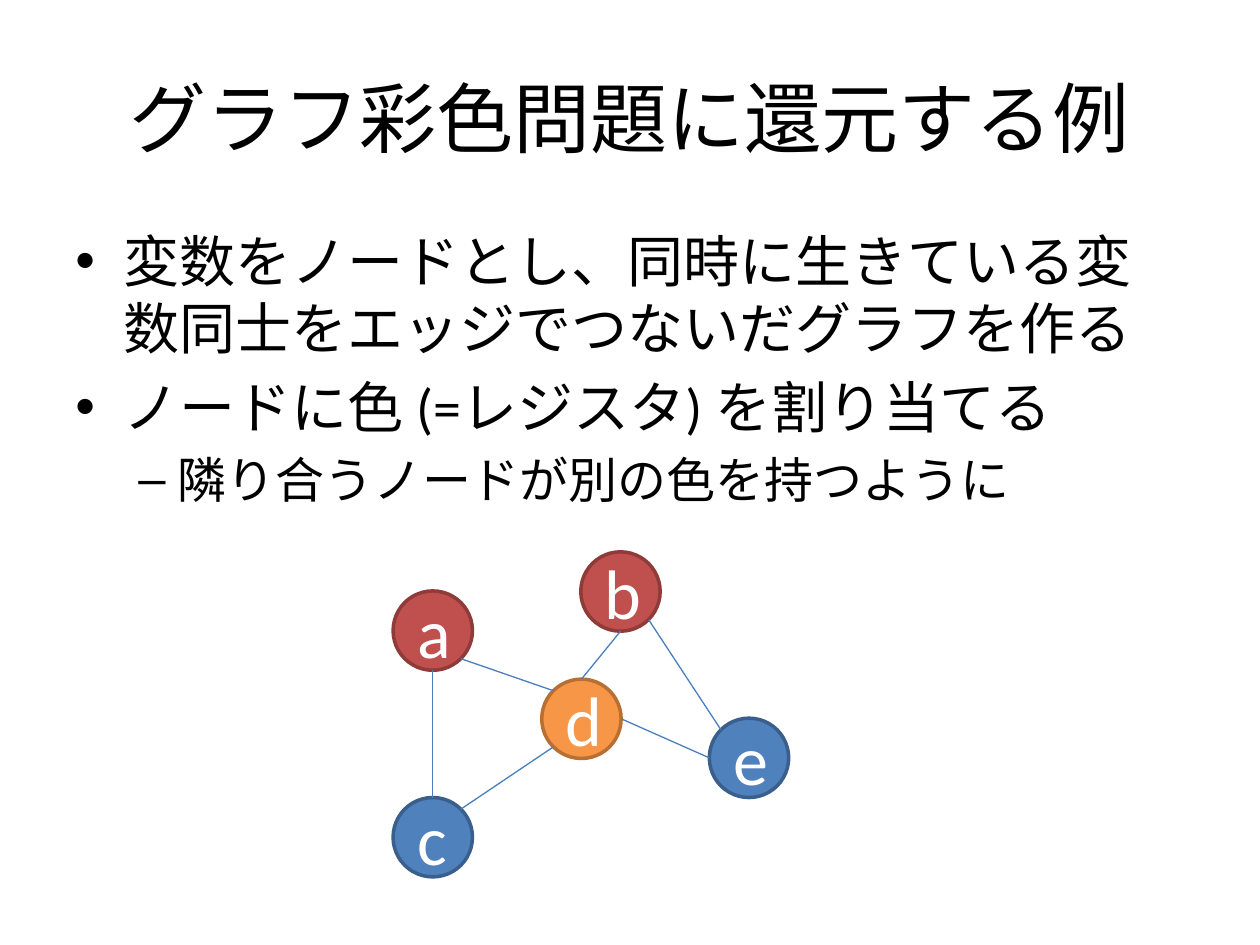
import math

import pptx
import pptx.dml.color
import pptx.enum.shapes
import pptx.enum.text
import pptx.oxml.ns
import pptx.util
from lxml import etree
from pptx.util import Inches

FONT = "Calibri"
COLORS = {
    "text": "000000", "letter": "FFFFFF", "edge": "4B7EBC",
    "red": "C0504D", "red_line": "8E3B39",
    "blue": "4F81BD", "blue_line": "3A5F8C",
    "orange": "F79646", "orange_line": "B76F34",
}
DIAMETER = 0.63
# letter: (left, top, colour)
NODES = {
    "a": (3.12, 4.69, "red"),
    "b": (4.61, 4.38, "red"),
    "e": (5.63, 5.7, "blue"),
    "c": (3.12, 6.33, "blue"),
    "d": (4.3, 5.39, "orange"),
}
# (node, clockwise angle from the right) at each end
EDGES = [
    (("b", 90), ("d", 270)),
    (("d", 0), ("e", 180)),
    (("a", 45), ("d", 225)),
    (("c", 315), ("d", 135)),
    (("a", 90), ("c", 270)),
    (("b", 45), ("e", 225)),
]
# (text, level, size, bullet, text indent, hanging indent)
BULLETS = [
    ("変数をノードとし、同時に生きている変数同士をエッジでつないだグラフを作る", 0, 32, "•", 0.38, 0.38),
    ("ノードに色 (=レジスタ) を割り当てる", 0, 32, "•", 0.38, 0.38),
    ("隣り合うノードが別の色を持つように", 1, 28, "–", 0.81, 0.31),
]


def rgb(name):
    return pptx.dml.color.RGBColor.from_string(COLORS[name])


def style_paragraph(para, size, color):
    para.font.name = FONT
    para.font.size = pptx.util.Pt(size)
    para.font.color.rgb = rgb(color)


def add_text_frame(page, left, top, width, height):
    box = page.shapes.add_textbox(Inches(left), Inches(top), Inches(width), Inches(height))
    box.text_frame.word_wrap = True
    return box.text_frame


def add_title(page, text):
    frame = add_text_frame(page, 0.5, 0.3, 9, 1.25)
    frame.vertical_anchor = pptx.enum.text.MSO_ANCHOR.MIDDLE
    para = frame.paragraphs[0]
    para.text = text
    para.alignment = pptx.enum.text.PP_ALIGN.CENTER
    style_paragraph(para, 44, "text")


def set_bullet(para, mark, indent, hanging):
    properties = para._p.get_or_add_pPr()
    properties.set("marL", str(Inches(indent)))
    properties.set("indent", str(-Inches(hanging)))
    font = etree.SubElement(properties, pptx.oxml.ns.qn("a:buFont"))
    font.set("typeface", "Arial")
    bullet = etree.SubElement(properties, pptx.oxml.ns.qn("a:buChar"))
    bullet.set("char", mark)


def add_bullets(page):
    frame = add_text_frame(page, 0.5, 1.75, 9, 2.63)
    for index, (text, level, size, mark, indent, hanging) in enumerate(BULLETS):
        para = frame.add_paragraph() if index else frame.paragraphs[0]
        para.text = text
        para.level = level
        para.space_before = pptx.util.Pt(size * 0.2)
        set_bullet(para, mark, indent, hanging)
        style_paragraph(para, size, "text")


def add_node(page, letter, left, top, color):
    node = page.shapes.add_shape(
        pptx.enum.shapes.MSO_SHAPE.OVAL,
        Inches(left), Inches(top), Inches(DIAMETER), Inches(DIAMETER))
    node.shadow.inherit = False
    node.fill.solid()
    node.fill.fore_color.rgb = rgb(color)
    node.line.color.rgb = rgb(color + "_line")
    node.line.width = pptx.util.Pt(2)
    node.text_frame.vertical_anchor = pptx.enum.text.MSO_ANCHOR.MIDDLE
    para = node.text_frame.paragraphs[0]
    para.text = letter
    para.alignment = pptx.enum.text.PP_ALIGN.CENTER
    style_paragraph(para, 40, "letter")


def rim_point(letter, angle):
    """Point on a node's circle at a clockwise angle in degrees."""
    left, top, _ = NODES[letter]
    radius = DIAMETER / 2
    turn = math.radians(angle)
    return (Inches(left + radius * (1 + math.cos(turn))),
            Inches(top + radius * (1 + math.sin(turn))))


def add_edge(page, start, end):
    edge = page.shapes.add_connector(
        pptx.enum.shapes.MSO_CONNECTOR.STRAIGHT, *rim_point(*start), *rim_point(*end))
    edge.line.color.rgb = rgb("edge")
    edge.line.width = pptx.util.Pt(0.75)
    etree.SubElement(edge._element.spPr, pptx.oxml.ns.qn("a:effectLst"))


def main():
    deck = pptx.Presentation()
    deck.slide_width, deck.slide_height = Inches(10), Inches(7.5)
    page = deck.slides.add_slide(deck.slide_layouts[6])
    add_title(page, "グラフ彩色問題に還元する例")
    add_bullets(page)
    for letter, (left, top, color) in NODES.items():
        add_node(page, letter, left, top, color)
    for start, end in EDGES:
        add_edge(page, start, end)
    deck.save("out.pptx")


if __name__ == "__main__":
    main()
